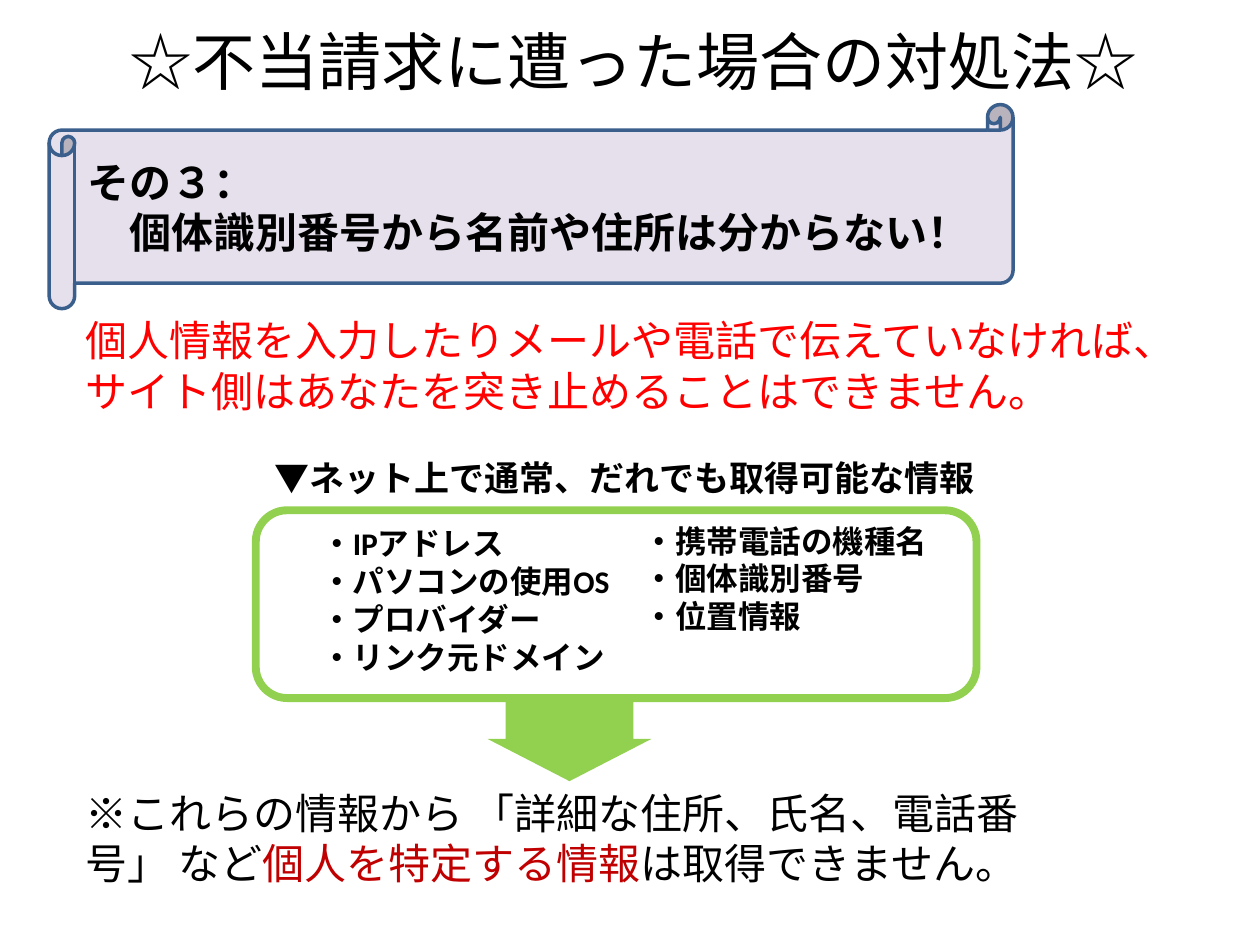
from dataclasses import dataclass

from lxml import etree
from pptx import Presentation
from pptx import util as u
from pptx.dml.color import RGBColor
from pptx.enum import shapes, text
from pptx.oxml import ns

COLOURS = {
    "black": "000000",
    "white": "FFFFFF",
    "red": "FF0000",
    "dark_red": "C00000",
    "green": "92D050",
    "lavender": "E6E0EC",
    "blue": "3A5F8C",
}
FONT = "Calibri"
COLUMNS, ROWS = 100, 75
SLIDE_WIDTH, SLIDE_HEIGHT = u.Inches(10), u.Inches(7.5)


@dataclass(frozen=True)
class Area:
    column: float
    row: float
    columns: float
    rows: float

    def lengths(self) -> tuple[int, int, int, int]:
        across, down = SLIDE_WIDTH / COLUMNS, SLIDE_HEIGHT / ROWS
        return (round(self.column * across), round(self.row * down),
                round(self.columns * across), round(self.rows * down))


@dataclass(frozen=True)
class Span:
    words: str
    colour: str = "black"


@dataclass(frozen=True)
class Writing:
    area: Area
    paragraphs: tuple[tuple[Span, ...], ...]
    size: float
    bold: bool = False
    align: text.PP_ALIGN = text.PP_ALIGN.LEFT


@dataclass(frozen=True)
class Figure:
    kind: shapes.MSO_SHAPE
    area: Area
    fill: str
    line: str | None = None
    line_width: float = 0
    adjustments: tuple[float, ...] = ()


def lines(*words: str) -> tuple[tuple[Span, ...], ...]:
    return tuple((Span(line),) for line in words)


TITLE = Writing(Area(3.4, 1.3, 93.7, 7.1), lines("☆不当請求に遭った場合の対処法☆"),
                36, align=text.PP_ALIGN.CENTER)
LISTS = (
    Writing(Area(24.5, 41.1, 26.5, 13.1),
            lines("・IPアドレス", "・パソコンの使用OS", "・プロバイダー", "・リンク元ドメイン"), 18, True),
    Writing(Area(50.1, 40.9, 26.8, 10.1),
            lines("・携帯電話の機種名", "・個体識別番号", "・位置情報"), 18, True),
)
NOTES = (
    Writing(Area(20.8, 35.7, 59.6, 4.4),
            lines("▼ネット上で通常、だれでも取得可能な情報"), 20, True),
    Writing(Area(5.8, 24.5, 88.8, 9.1),
            ((Span("個人情報を入力したりメールや電話で伝えていなければ、"
                   "サイト側はあなたを突き止めることはできません。", "red"),),), 24),
    Writing(Area(5.8, 62, 81.9, 9.1),
            ((Span("※これらの情報から 「詳細な住所、氏名、電話番号」 など"),
              Span("個人を特定する情報", "dark_red"),
              Span("は取得できません。")),), 24),
)
BANNER = Figure(shapes.MSO_SHAPE.HORIZONTAL_SCROLL, Area(3.9, 8.3, 76.5, 16.2),
                "lavender", "blue", 2)
BANNER_WRITING = Writing(BANNER.area, lines("その３：", "　個体識別番号から名前や住所は分からない！"),
                         24, True)
FRAME = Figure(shapes.MSO_SHAPE.ROUNDED_RECTANGLE, Area(20.3, 40.5, 57.2, 14.9),
               "white", "green", 4.5)
ARROW = Figure(shapes.MSO_SHAPE.DOWN_ARROW, Area(38.7, 55.3, 13, 6.7),
               "green", adjustments=(0.78, 0.5))


def colour(name: str) -> RGBColor:
    return RGBColor.from_string(COLOURS[name])


def place(box, area: Area) -> None:
    box.left, box.top, box.width, box.height = area.lengths()


def write(box, writing: Writing, anchor=text.MSO_ANCHOR.TOP) -> None:
    frame = box.text_frame
    frame.word_wrap = True
    frame.auto_size = text.MSO_AUTO_SIZE.NONE
    frame.vertical_anchor = anchor
    for index, spans in enumerate(writing.paragraphs):
        para = frame.add_paragraph() if index else frame.paragraphs[0]
        para.alignment = writing.align
        para.space_before = u.Pt(0)
        if box.is_placeholder:
            properties = para._p.get_or_add_pPr()
            properties.set("marL", "0")
            properties.set("indent", "0")
            etree.SubElement(properties, ns.qn("a:buNone"))
        for part in spans:
            span = para.add_run()
            span.text = part.words
            span.font.name = FONT
            span.font.size = u.Pt(writing.size)
            span.font.bold = writing.bold
            span.font.color.rgb = colour(part.colour)


def draw(page, figure: Figure):
    box = page.shapes.add_shape(figure.kind, *figure.area.lengths())
    box.shadow.inherit = False
    box.fill.solid()
    box.fill.fore_color.rgb = colour(figure.fill)
    if figure.line:
        box.line.color.rgb = colour(figure.line)
        box.line.width = u.Pt(figure.line_width)
    else:
        box.line.fill.background()
    for index, value in enumerate(figure.adjustments):
        box.adjustments[index] = value
    return box


def main() -> None:
    deck = Presentation()
    deck.slide_width, deck.slide_height = SLIDE_WIDTH, SLIDE_HEIGHT
    page = deck.slides.add_slide(deck.slide_layouts.get_by_name("Two Content"))

    frame = draw(page, FRAME)
    page.shapes.title._element.addprevious(frame._element)

    title, *bodies = page.placeholders
    for box, writing in zip((title, *bodies), (TITLE, *LISTS)):
        place(box, writing.area)
        write(box, writing)

    write(draw(page, BANNER), BANNER_WRITING, text.MSO_ANCHOR.MIDDLE)
    for writing in NOTES:
        write(page.shapes.add_textbox(*writing.area.lengths()), writing)
    draw(page, ARROW)

    deck.save("out.pptx")


if __name__ == "__main__":
    main()
